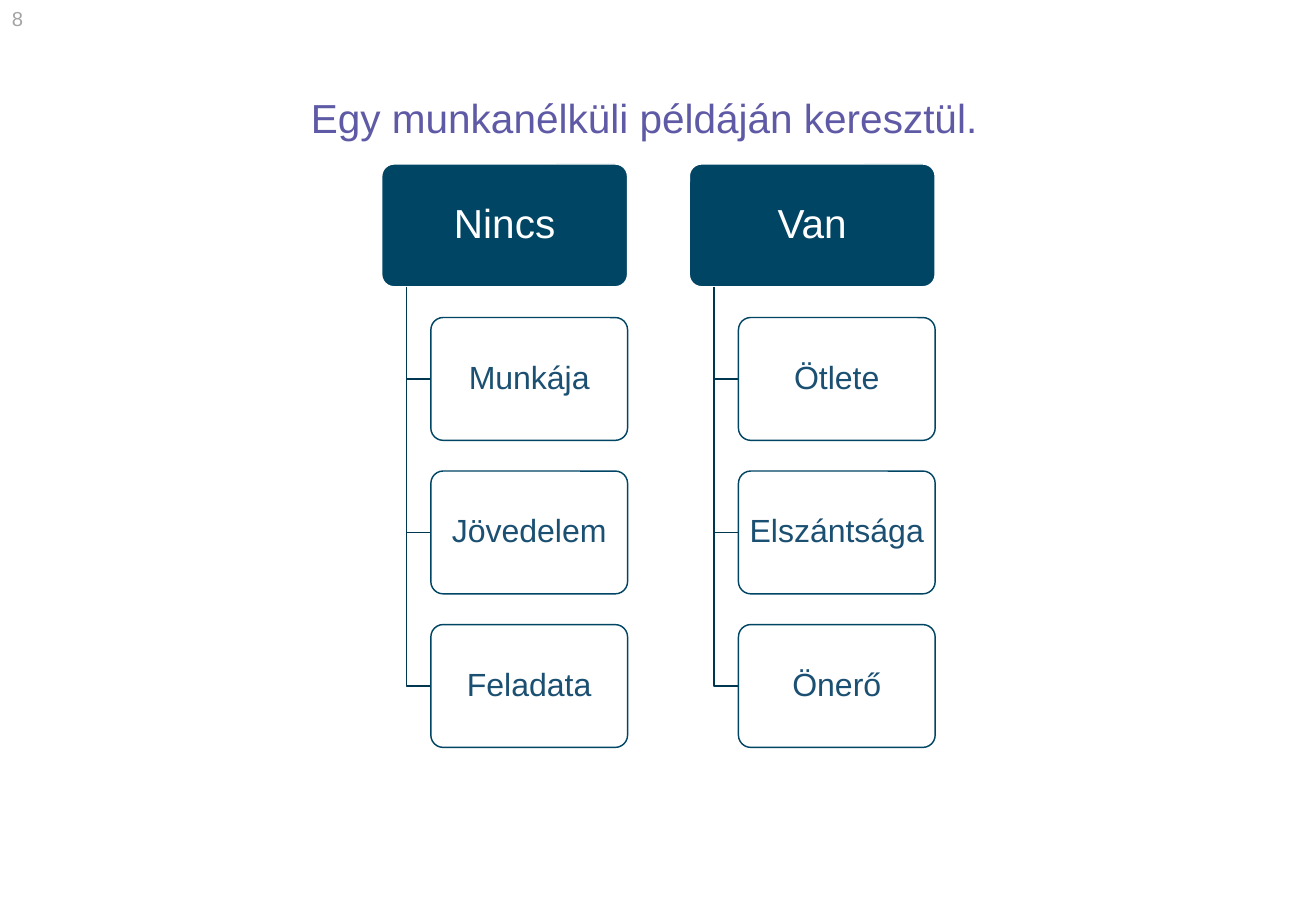
from lxml import etree
from pptx import Presentation
from pptx import util as u
from pptx.dml.color import RGBColor
from pptx.enum import shapes, text
from pptx.oxml.ns import qn

INK = {"head": "004564", "stem": "003750", "card": "1B5072",
       "title": "5F5AA5", "page": "A3A4A6", "white": "FFFFFF"}
LISTS = {"Nincs": ["Munkája", "Jövedelem", "Feladata"],
         "Van": ["Ötlete", "Elszántsága", "Önerő"]}


def rgb(name):
    """Return the named colour."""
    return RGBColor.from_string(INK[name])


def write(frame, words, size, ink, form, **para):
    """Put one styled paragraph in a text frame."""
    for key, val in form.items():
        setattr(frame, key, val)
    line = frame.paragraphs[0]
    for key, val in para.items():
        setattr(line, key, val)
    run = line.add_run()
    run.text = words
    for key, val in {"name": "Arial", "size": u.Pt(size)}.items():
        setattr(run.font, key, val)
    run.font.color.rgb = rgb(ink)


def label(slide, box, words, size, ink, align):
    """Add a plain text box."""
    frame = slide.shapes.add_textbox(*map(u.Cm, box)).text_frame
    write(frame, words, size, ink, {"word_wrap": True}, alignment=align)


def node(slide, box, words, size, fill, edge, ink, pad):
    """Add a rounded box with centred text."""
    shape = slide.shapes.add_shape(shapes.MSO_SHAPE.ROUNDED_RECTANGLE, *map(u.Cm, box))
    shape.adjustments[0] = 0.1
    shape.shadow.inherit = False
    shape.fill.solid()
    shape.fill.fore_color.rgb = rgb(fill)
    shape.line.color.rgb = rgb(edge)
    shape.line.width = u.Pt(0.85)
    form = {"word_wrap": True, "vertical_anchor": text.MSO_ANCHOR.MIDDLE,
            "margin_left": u.Cm(pad), "margin_right": u.Cm(pad),
            "margin_top": u.Cm(0.08), "margin_bottom": u.Cm(0.08)}
    write(shape.text_frame, words, size, ink, form,
          alignment=text.PP_ALIGN.CENTER, line_spacing=0.9)
    return shape


def elbow(slide, left, top, right, low):
    """Draw a branch that goes down and then right."""
    path = slide.shapes.build_freeform(u.Cm(left), u.Cm(top))
    path.add_line_segments([(u.Cm(left), u.Cm(low)), (u.Cm(right), u.Cm(low))], close=False)
    shape = path.convert_to_shape()
    shape.shadow.inherit = False
    shape.fill.background()
    shape.line.color.rgb = rgb("stem")
    shape.line.width = u.Pt(0.85)


def column(slide, box, head, items):
    """Place a heading and its branch of cards in a box."""
    left, top, wide, high = box
    tall = high / (1 + 1.25 * len(items))
    node(slide, (left, top, wide, tall), head, 24, "head", "white", "white", 0.13)
    inset = left + 0.2 * wide
    for row, item in enumerate(items, 1):
        y = top + 1.25 * tall * row
        elbow(slide, left + 0.1 * wide, top + tall, inset, y + tall / 2)
        card = node(slide, (inset, y, 0.8 * wide, tall), item, 19,
                    "white", "head", "card", 0.1)
        tint = card.fill.fore_color._xFill.find(qn("a:srgbClr"))
        etree.SubElement(tint, qn("a:alpha")).set("val", "90000")


def main():
    """Build and save the slide."""
    deck = Presentation()
    deck.slide_width, deck.slide_height = u.Cm(27.51), u.Cm(19.05)
    slide = deck.slides.add_slide(deck.slide_layouts[6])
    for place, (head, items) in enumerate(LISTS.items()):
        column(slide, (7.98 + 6.43 * place, 3.43, 5.14, 12.2), head, items)
    label(slide, (2.06, 1.83, 22.81, 1.27), "Egy munkanélküli példáján keresztül.",
          24, "title", text.PP_ALIGN.CENTER)
    label(slide, (0, 0, 1.19, 1.02), "8", 12, "page", text.PP_ALIGN.LEFT)
    deck.save("out.pptx")


if __name__ == "__main__":
    main()
